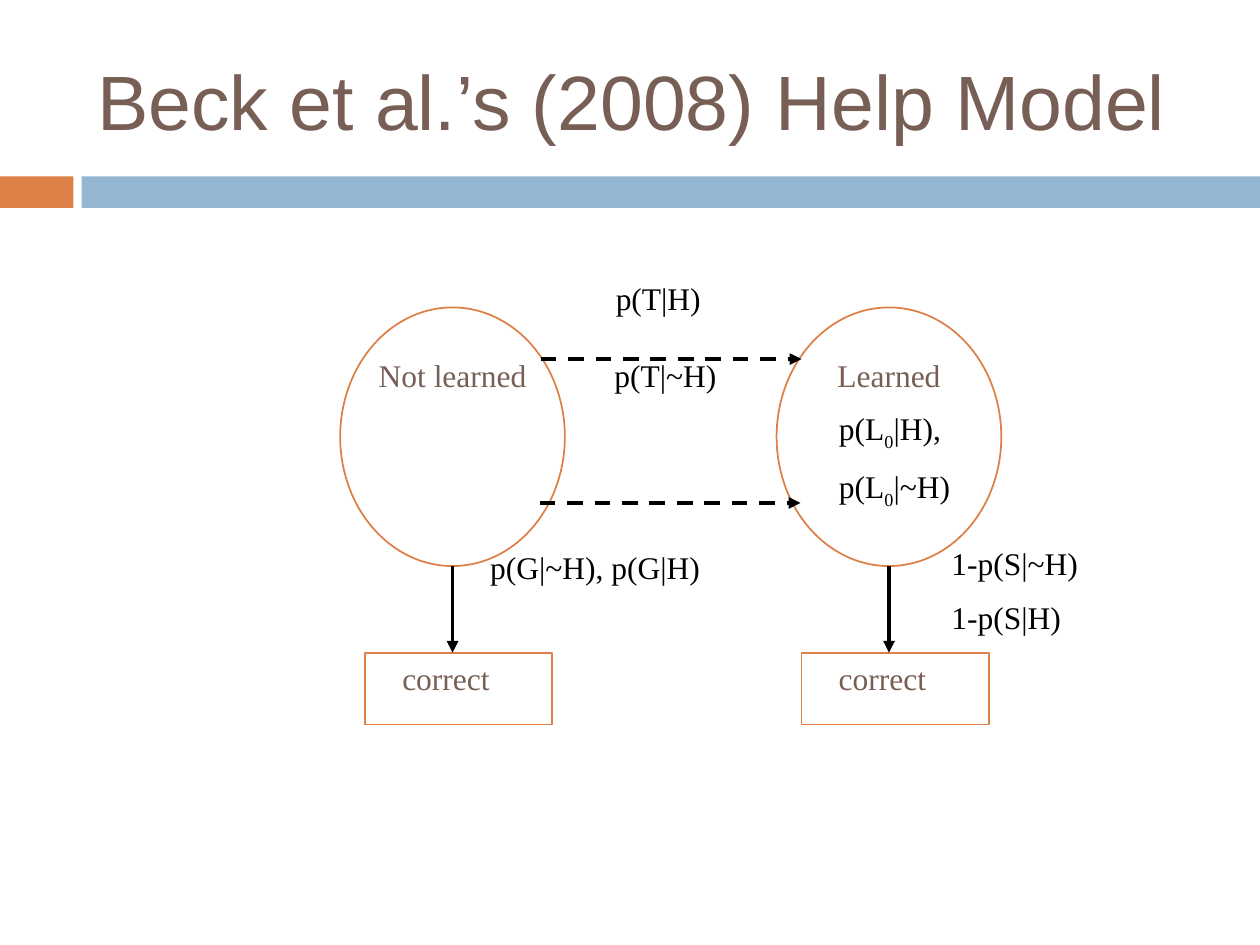
from lxml import etree
from pptx import Presentation
from pptx.dml.color import RGBColor
from pptx.enum.dml import MSO_LINE
from pptx.enum.shapes import MSO_CONNECTOR, MSO_SHAPE
from pptx.enum.text import MSO_ANCHOR, PP_ALIGN
from pptx.oxml.ns import qn
from pptx.util import Pt

RECTANGLE, OVAL = MSO_SHAPE.RECTANGLE, MSO_SHAPE.OVAL
STRAIGHT, DASH = MSO_CONNECTOR.STRAIGHT, MSO_LINE.DASH
TOP, MIDDLE = MSO_ANCHOR.TOP, MSO_ANCHOR.MIDDLE
LEFT, CENTER = PP_ALIGN.LEFT, PP_ALIGN.CENTER
ORANGE, BLUE, BROWN, BLACK = "DD8047", "94B6D2", "775F55", "000000"

STATE_LEFT, STATE_GAP = 194.4, 249.4
STATE_TOP, STATE_WIDTH, STATE_HEIGHT = 175.7, 128.4, 147.8
ANSWER_TOP, ANSWER_WIDTH, ANSWER_HEIGHT = 373, 107, 41


def color(hex_string):
    return RGBColor.from_string(hex_string)


def add_text(page, text, left, top, width, height, size=18, font="Times New Roman",
             ink=BLACK, align=LEFT, anchor=TOP):
    """Each line is a paragraph; characters between underscores are subscript."""
    box = page.shapes.add_textbox(Pt(left), Pt(top), Pt(width), Pt(height))
    frame = box.text_frame
    frame.word_wrap = True
    frame.vertical_anchor = anchor
    for index, line in enumerate(text.split("\n")):
        para = frame.add_paragraph() if index else frame.paragraphs[0]
        para.alignment = align
        para.space_before = Pt(9 if index else 0)
        for position, part in enumerate(line.split("_")):
            span = para.add_run()
            span.text = part
            span.font.size = Pt(size)
            span.font.name = font
            span.font.color.rgb = color(ink)
            if position % 2:
                span.font._element.set("baseline", "-25000")


def add_block(page, kind, left, top, width, height, fill=None, outline=None):
    shape = page.shapes.add_shape(kind, Pt(left), Pt(top), Pt(width), Pt(height))
    shape.shadow.inherit = False
    if fill:
        shape.fill.solid()
        shape.fill.fore_color.rgb = color(fill)
    else:
        shape.fill.background()
    if outline:
        shape.line.color.rgb = color(outline)
        shape.line.width = Pt(1)
    else:
        shape.line.fill.background()


def add_arrow(page, start_x, start_y, end_x, end_y, dashed=False):
    arrow = page.shapes.add_connector(
        STRAIGHT, Pt(start_x), Pt(start_y), Pt(end_x), Pt(end_y))
    arrow.line.color.rgb = color(BLACK)
    arrow.line.width = Pt(2.25)
    if dashed:
        arrow.line.dash_style = DASH
    etree.SubElement(arrow.line._get_or_add_ln(), qn("a:tailEnd"), type="triangle")
    etree.SubElement(arrow._element.spPr, qn("a:effectLst"))


def add_state(page, left, name):
    """A knowledge state with its arrow down to the answer."""
    middle = left + STATE_WIDTH / 2
    answer_left = left + 14.2
    add_block(page, OVAL, left, STATE_TOP, STATE_WIDTH, STATE_HEIGHT, outline=ORANGE)
    add_text(page, name, middle - 78.5, 200, 157, 40, ink=BROWN, align=CENTER)
    add_block(page, RECTANGLE, answer_left, ANSWER_TOP, ANSWER_WIDTH, ANSWER_HEIGHT,
              outline=ORANGE)
    add_text(page, "correct", answer_left + 14.2, ANSWER_TOP, 100, 40, ink=BROWN)
    add_arrow(page, middle, STATE_TOP + STATE_HEIGHT, middle, ANSWER_TOP)


def main():
    deck = Presentation()
    deck.slide_width, deck.slide_height = Pt(720), Pt(540)
    page = deck.slides.add_slide(deck.slide_layouts[6])

    # Title and band
    add_block(page, RECTANGLE, 0, 100.8, 42, 18, fill=ORANGE)
    add_block(page, RECTANGLE, 46.6, 100.8, 673.4, 18, fill=BLUE)
    add_text(page, "Beck et al.’s (2008) Help Model", 48.5, 18, 642, 78,
             size=44, font="Arial", ink=BROWN, anchor=MIDDLE)

    # States and answers
    for index, name in enumerate(("Not learned", "Learned")):
        add_state(page, STATE_LEFT + index * STATE_GAP, name)

    # Learning transitions
    for start, height in ((309, 205.2), (308.4, 287.4)):
        add_arrow(page, start, height, start + 149, height, dashed=True)

    # Probabilities
    for text, left, top, width, height in (
            ("p(T|H)", 344.8, 156, 86, 40),
            ("p(T|~H)", 344, 200, 107, 40),
            ("p(G|~H), p(G|H)", 273, 309.6, 143, 70),
            ("1-p(S|~H)\n1-p(S|H)", 536.6, 307.4, 135, 85),
            ("p(L_0_|H),\np(L_0_|~H)", 472.3, 230, 132, 85)):
        add_text(page, text, left, top, width, height)

    deck.save("out.pptx")


if __name__ == "__main__":
    main()
